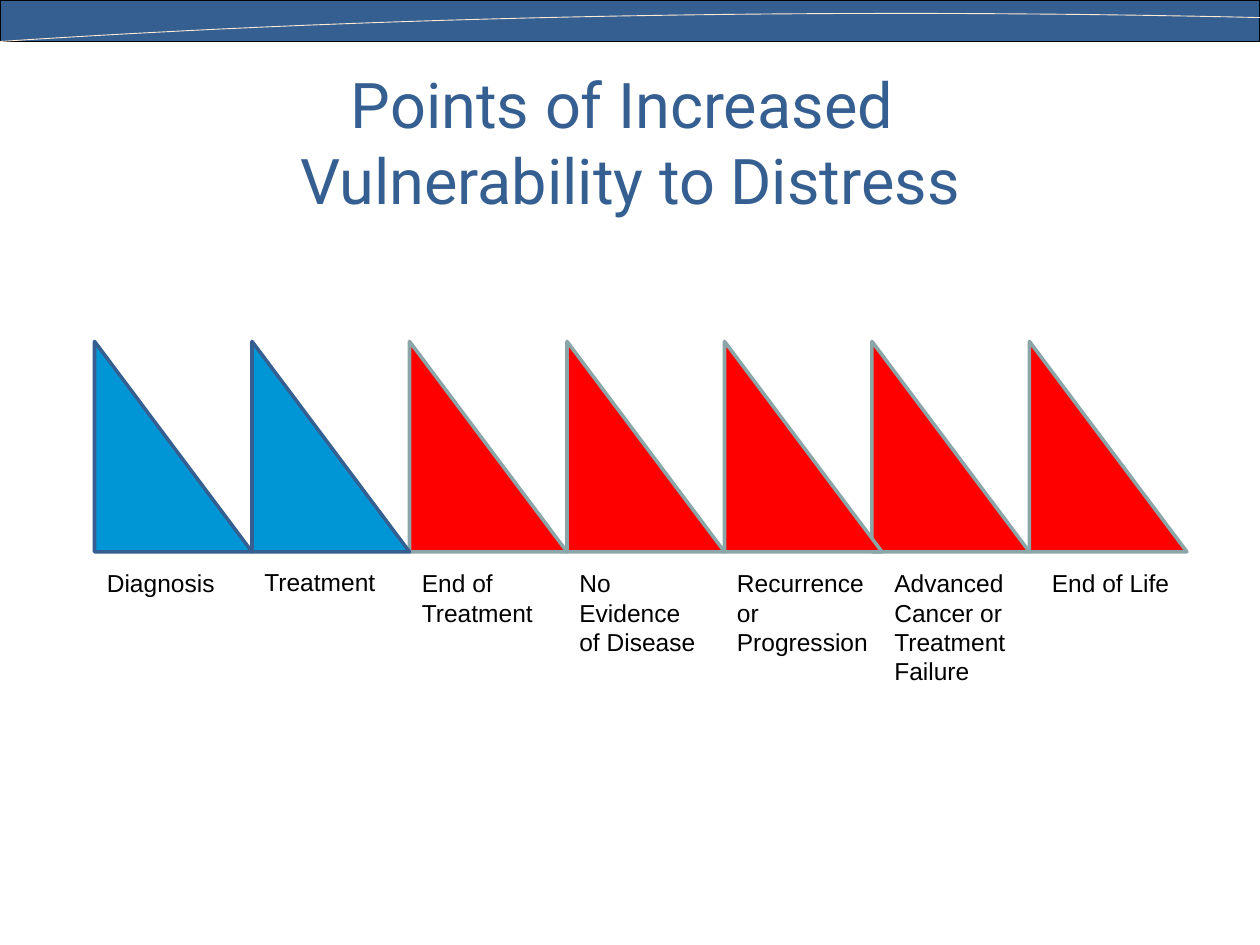
from pptx import Presentation
from pptx.dml.color import RGBColor
from pptx.enum.shapes import MSO_SHAPE
from pptx.enum.text import MSO_ANCHOR, MSO_AUTO_SIZE, PP_ALIGN
from pptx.util import Inches, Pt

RECTANGLE = MSO_SHAPE.RECTANGLE
RIGHT_TRIANGLE = MSO_SHAPE.RIGHT_TRIANGLE
MIDDLE = MSO_ANCHOR.MIDDLE
GROW = MSO_AUTO_SIZE.SHAPE_TO_FIT_TEXT
LEFT, CENTER = PP_ALIGN.LEFT, PP_ALIGN.CENTER

NAVY, BLUE, RED = "365F91", "0096D6", "FF0000"
GREY, CREAM, BLACK = "8AA6A8", "FFEAD5", "000000"


def color(hex_value):
    return RGBColor.from_string(hex_value)


def apply(target, values):
    for name, value in values.items():
        setattr(target, name, value)


def bezier(start, control_1, control_2, end, steps=60):
    """Points along a cubic curve."""
    points = []
    for step in range(steps + 1):
        t = step / steps
        weights = ((1 - t) ** 3, 3 * t * (1 - t) ** 2, 3 * t ** 2 * (1 - t), t ** 3)
        corners = (start, control_1, control_2, end)
        points.append(tuple(
            Inches(sum(w * corner[axis] for w, corner in zip(weights, corners)))
            for axis in (0, 1)))
    return points


class SlideBuilder:
    title_font = {"name": "Roboto", "size": Pt(36), "bold": False}
    label_font = {"name": "Arial", "size": Pt(14)}

    def __init__(self, slide):
        self.slide = slide

    def set_text(self, frame, text, font, font_color, alignment):
        paragraph = frame.paragraphs[0]
        paragraph.text = text
        paragraph.alignment = alignment
        for run in paragraph.runs:
            apply(run.font, font)
            run.font.color.rgb = color(font_color)

    def outline(self, shape, line_color, width):
        shape.shadow.inherit = False
        shape.line.color.rgb = color(line_color)
        shape.line.width = Pt(width)

    def shape(self, kind, box, fill, line_color, width):
        shape = self.slide.shapes.add_shape(kind, *map(Inches, box))
        shape.fill.solid()
        shape.fill.fore_color.rgb = color(fill)
        self.outline(shape, line_color, width)

    def curve(self, points, line_color, width):
        builder = self.slide.shapes.build_freeform(*points[0])
        builder.add_line_segments(points[1:], close=False)
        curve = builder.convert_to_shape()
        curve.fill.background()
        self.outline(curve, line_color, width)

    def title(self, box, text):
        title = self.slide.shapes.title
        apply(title, dict(zip(("left", "top", "width", "height"), map(Inches, box))))
        apply(title.text_frame, {"vertical_anchor": MIDDLE, "word_wrap": True})
        self.set_text(title.text_frame, text, self.title_font, NAVY, CENTER)

    def label(self, box, text):
        label = self.slide.shapes.add_textbox(*map(Inches, box))
        apply(label.text_frame, {"word_wrap": True, "auto_size": GROW})
        self.set_text(label.text_frame, text, self.label_font, BLACK, LEFT)


def main():
    deck = Presentation()
    apply(deck, {"slide_width": Inches(10), "slide_height": Inches(7.5)})
    builder = SlideBuilder(deck.slides.add_slide(deck.slide_layouts[5]))

    # Header band with its curve
    builder.shape(RECTANGLE, (0, 0, 10, 0.33), NAVY, BLACK, 0.75)
    builder.curve(bezier((10, 0.14), (7.44, 0.08), (3.79, 0.08), (0, 0.33)), CREAM, 0.5)

    builder.title((0.5, 0.33, 9, 1.58), "Points of Increased \nVulnerability to Distress")

    # Stages: label, label width, label height
    stages = [
        ("Diagnosis", 1.17, 0.34),
        ("Treatment", 1.17, 0.34),
        ("End of Treatment", 1.17, 0.57),
        ("No Evidence of Disease", 1.17, 0.81),
        ("Recurrence or Progression", 1.25, 0.81),
        ("Advanced Cancer or Treatment Failure", 1.17, 1.04),
        ("End of Life", 1.17, 0.34),
    ]
    first_left, pitch = 0.75, 1.25
    late_shift = 0.08  # the last two triangles sit slightly left of their labels

    # Triangles, right to left so that earlier stages lie in front
    for index in reversed(range(len(stages))):
        left = first_left + index * pitch - (late_shift if index >= 5 else 0)
        fill, line_color = (BLUE, NAVY) if index < 2 else (RED, GREY)
        builder.shape(RIGHT_TRIANGLE, (left, 2.71, pitch, 1.67), fill, line_color, 2)

    # Stage labels
    for index, (stage, width, height) in enumerate(stages):
        top = 4.45 if stage == "Treatment" else 4.46
        builder.label((first_left + index * pitch, top, width, height), stage)

    deck.save("out.pptx")


if __name__ == "__main__":
    main()
